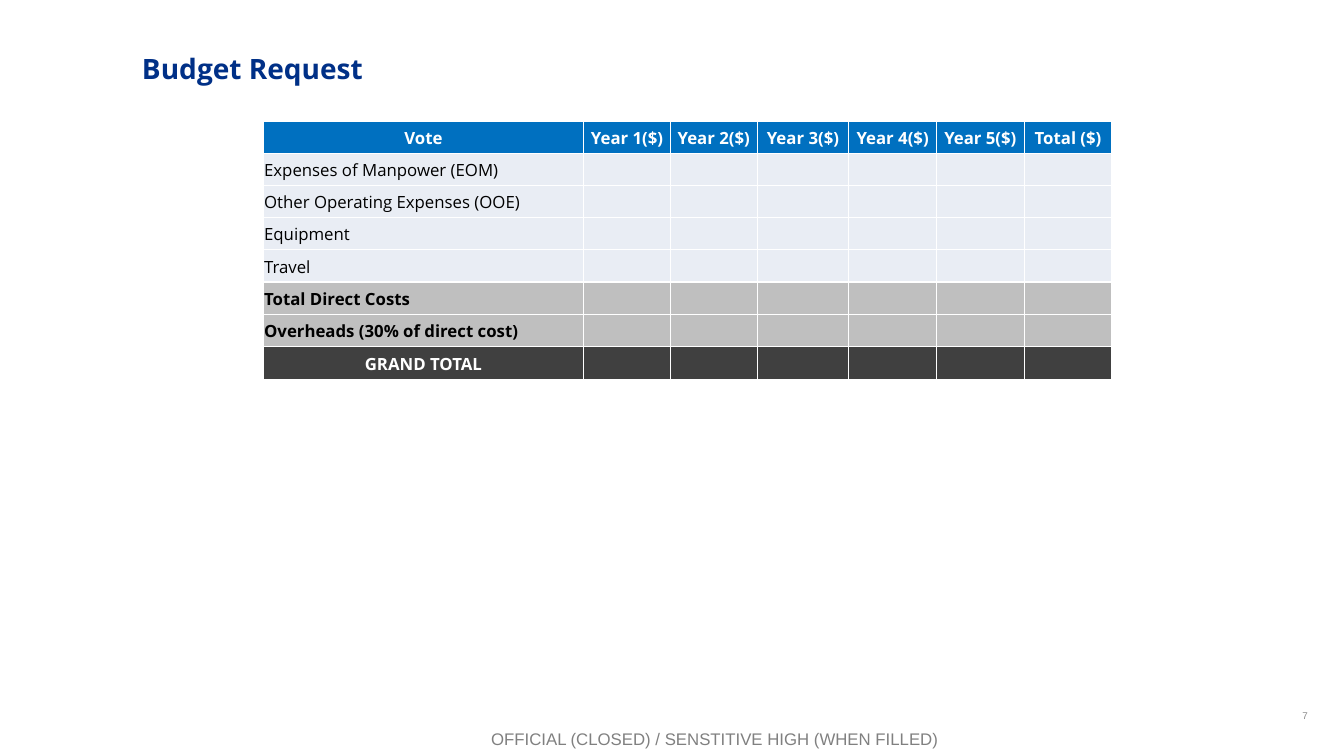
from dataclasses import dataclass

from lxml import etree
from pptx import Presentation
from pptx.dml.color import RGBColor
from pptx.enum.text import MSO_ANCHOR, PP_ALIGN
from pptx.oxml.ns import qn
from pptx.util import Inches, Pt

LEFT, CENTER, RIGHT = PP_ALIGN.LEFT, PP_ALIGN.CENTER, PP_ALIGN.RIGHT
TOP, MIDDLE = MSO_ANCHOR.TOP, MSO_ANCHOR.MIDDLE


@dataclass(frozen=True)
class Theme:
    head_font: str = "Open Sans"
    note_font: str = "Arial"
    title: str = "003087"
    note: str = "808080"
    page: str = "8C8C8C"
    white: str = "FFFFFF"
    black: str = "000000"
    blue: str = "0070C0"
    pale: str = "E9EDF4"
    grey: str = "BFBFBF"
    dark: str = "404040"
    title_size: int = 20
    body_size: int = 12
    page_size: int = 7


THEME = Theme()
WIDTHS = [3.18, 0.86, 0.86, 0.91, 0.87, 0.87, 0.87]
HEIGHTS = [0.32] * 7 + [0.33]

# style: fill, text colour, bold, alignment
HEAD = (THEME.blue, THEME.white, True, CENTER)
ITEM = (THEME.pale, THEME.black, False, LEFT)
SUM = (THEME.grey, THEME.black, True, LEFT)
GRAND = (THEME.dark, THEME.white, True, CENTER)

YEARS = [f"Year {n}($)" for n in range(1, 6)]
ROWS = [
    (["Vote", *YEARS, "Total ($)"], HEAD),
    (["Expenses of Manpower (EOM)"], ITEM),
    (["Other Operating Expenses (OOE)"], ITEM),
    (["Equipment"], ITEM),
    (["Travel"], ITEM),
    (["Total Direct Costs"], SUM),
    (["Overheads (30% of direct cost)"], SUM),
    (["GRAND TOTAL"], GRAND),
]


def add_run(para, text, font, size, color, bold=False):
    run = para.add_run()
    run.text = text
    run.font.name = font
    run.font.size = Pt(size)
    run.font.bold = bold
    run.font.color.rgb = RGBColor.from_string(color)


def add_text(slide, box, text, font, size, color, bold=False,
             align=LEFT, anchor=TOP):
    frame = slide.shapes.add_textbox(*map(Inches, box)).text_frame
    frame.word_wrap = True
    frame.vertical_anchor = anchor
    para = frame.paragraphs[0]
    para.alignment = align
    add_run(para, text, font, size, color, bold)
    return para


def add_edges(cell):
    """Draw a thin white line on all four sides; call before filling."""
    props = cell._tc.get_or_add_tcPr()
    for side in ("a:lnL", "a:lnR", "a:lnT", "a:lnB"):
        line = etree.SubElement(props, qn(side), w=str(Pt(1)))
        fill = etree.SubElement(line, qn("a:solidFill"))
        etree.SubElement(fill, qn("a:srgbClr"), val=THEME.white)


def fill_cell(cell, text, style):
    fill, color, bold, align = style
    add_edges(cell)
    cell.fill.solid()
    cell.fill.fore_color.rgb = RGBColor.from_string(fill)
    cell.vertical_anchor = MIDDLE
    cell.margin_left = cell.margin_right = cell.margin_top = Inches(0.01)
    cell.margin_bottom = 0
    para = cell.text_frame.paragraphs[0]
    para.alignment = align
    if text:
        add_run(para, text, THEME.head_font, THEME.body_size, color, bold)
    else:
        # keeps an empty cell from stretching its row
        etree.SubElement(para._p, qn("a:endParaRPr"),
                         sz=str(THEME.body_size * 100))


def add_budget(slide, left, top):
    size = map(Inches, (left, top, sum(WIDTHS), sum(HEIGHTS)))
    table = slide.shapes.add_table(len(ROWS), len(WIDTHS), *size).table
    table.first_row = table.horz_banding = False
    for col, width in zip(table.columns, WIDTHS):
        col.width = Inches(width)
    for row, height, (texts, style) in zip(table.rows, HEIGHTS, ROWS):
        row.height = Inches(height)
        for i, cell in enumerate(row.cells):
            fill_cell(cell, texts[i] if i < len(texts) else "", style)


def main():
    deck = Presentation()
    deck.slide_width, deck.slide_height = Inches(13.33), Inches(7.5)
    slide = deck.slides.add_slide(deck.slide_layouts[6])
    add_text(slide, (9.96, 6.9, 3.11, 0.4), "7", THEME.note_font,
             THEME.page_size, THEME.page, align=RIGHT, anchor=MIDDLE)
    title = add_text(slide, (1.31, 0.5, 11.55, 0.58), "Budget Request",
                     THEME.head_font, THEME.title_size, THEME.title, True)
    title.line_spacing = 0.9
    add_budget(slide, 2.61, 1.2)
    add_text(slide, (2.6, 7.18, 8.98, 0.3),
             "OFFICIAL (CLOSED) / SENSTITIVE HIGH (WHEN FILLED)",
             THEME.note_font, THEME.body_size, THEME.note, align=CENTER)
    deck.save("out.pptx")


if __name__ == "__main__":
    main()
